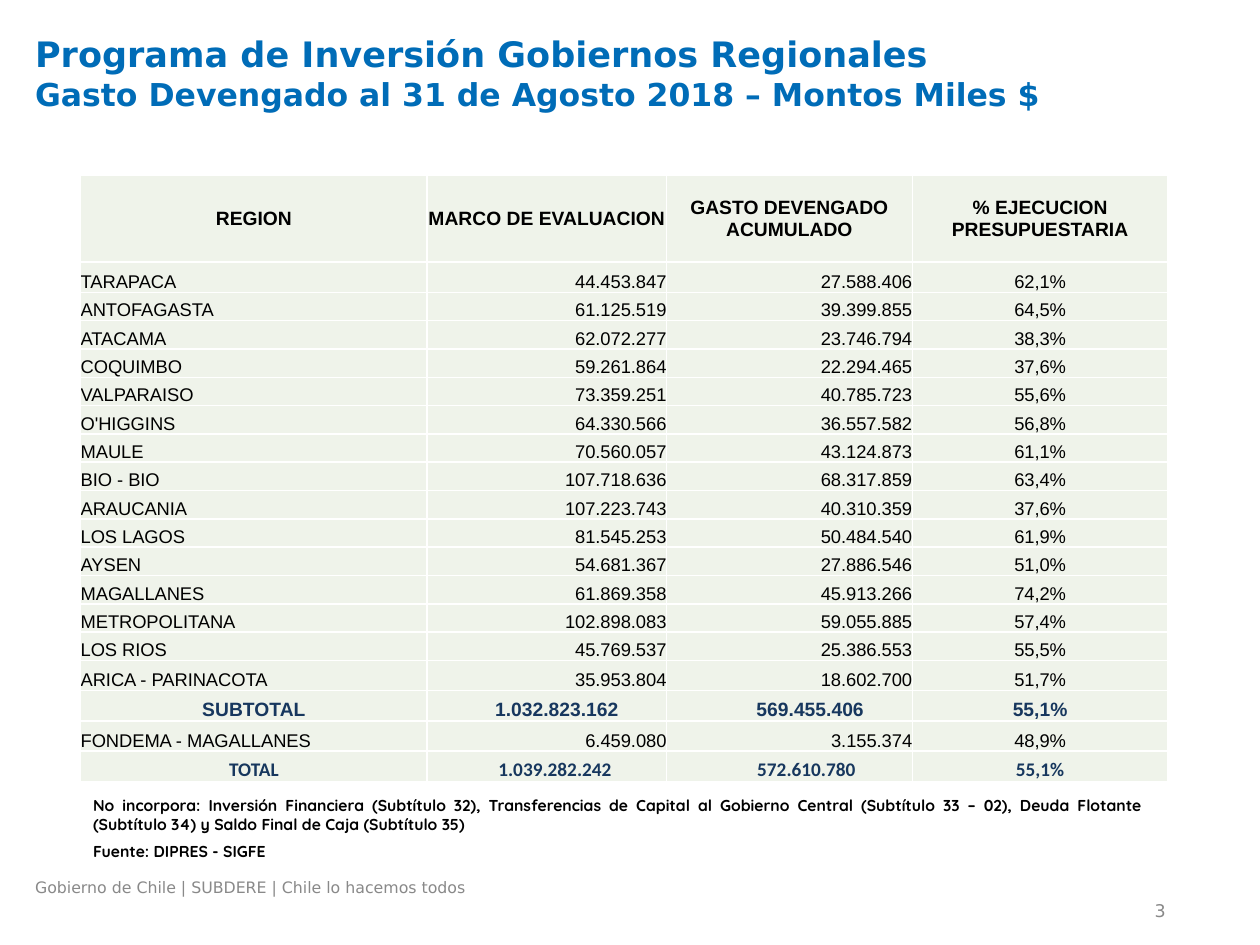
from lxml import etree
from pptx import Presentation
from pptx import util as u
from pptx.dml.color import RGBColor
from pptx.enum import text as t
from pptx.oxml.ns import qn

HUES = {"blue": "006CB7", "navy": "17375E", "gray": "898989",
        "black": "000000", "pale": "EFF3EA", "white": "FFFFFF"}
LEFT, MID, RIGHT, JUST = (t.PP_ALIGN.LEFT, t.PP_ALIGN.CENTER,
                          t.PP_ALIGN.RIGHT, t.PP_ALIGN.JUSTIFY)
TOP, CORE, LOW = (t.MSO_ANCHOR.TOP, t.MSO_ANCHOR.MIDDLE,
                  t.MSO_ANCHOR.BOTTOM)

HEAD = ["REGION", "MARCO DE EVALUACION", "GASTO DEVENGADO ACUMULADO",
        "% EJECUCION PRESUPUESTARIA"]
ROWS = [
    ("TARAPACA", "44.453.847", "27.588.406", "62,1%"),
    ("ANTOFAGASTA", "61.125.519", "39.399.855", "64,5%"),
    ("ATACAMA", "62.072.277", "23.746.794", "38,3%"),
    ("COQUIMBO", "59.261.864", "22.294.465", "37,6%"),
    ("VALPARAISO", "73.359.251", "40.785.723", "55,6%"),
    ("O'HIGGINS", "64.330.566", "36.557.582", "56,8%"),
    ("MAULE", "70.560.057", "43.124.873", "61,1%"),
    ("BIO - BIO", "107.718.636", "68.317.859", "63,4%"),
    ("ARAUCANIA", "107.223.743", "40.310.359", "37,6%"),
    ("LOS LAGOS", "81.545.253", "50.484.540", "61,9%"),
    ("AYSEN", "54.681.367", "27.886.546", "51,0%"),
    ("MAGALLANES", "61.869.358", "45.913.266", "74,2%"),
    ("METROPOLITANA", "102.898.083", "59.055.885", "57,4%"),
    ("LOS RIOS", "45.769.537", "25.386.553", "55,5%"),
    ("ARICA - PARINACOTA", "35.953.804", "18.602.700", "51,7%"),
    ("SUBTOTAL", "1.032.823.162", "569.455.406", "55,1%"),
    ("FONDEMA - MAGALLANES", "6.459.080", "3.155.374", "48,9%"),
    ("TOTAL", "1.039.282.242", "572.610.780", "55,1%"),
]
# Summary rows: font and left inset of each column
SUMS = {"SUBTOTAL": ("Arial", (0, 0.16, 0.33, 0)),
        "TOTAL": ("Calibri", (0, 0.13, 0.27, 0))}


def write(para, words, size=9, face="DejaVu Sans", hue="black", bold=False,
          align=LEFT, before=None):
    """Add a run of text to a paragraph."""
    para.alignment = align
    if before:
        para.space_before = u.Pt(before)
    run = para.add_run()
    run.text = words
    font = run.font
    font.size, font.name, font.bold = u.Pt(size), face, bold
    font.color.rgb = RGBColor.from_string(HUES[hue])


class Page:
    def __init__(self):
        self.deck = Presentation()
        self.deck.slide_width = u.Inches(10)
        self.deck.slide_height = u.Inches(7.5)
        self.slide = self.deck.slides.add_slide(self.deck.slide_layouts[6])

    def box(self, left, top, width, height, anchor=TOP):
        spot = [u.Inches(n) for n in (left, top, width, height)]
        frame = self.slide.shapes.add_textbox(*spot).text_frame
        frame.word_wrap = True
        frame.vertical_anchor = anchor
        return frame

    def edge(self, cell):
        props = cell._tc.get_or_add_tcPr()
        for n, side in enumerate(("a:lnL", "a:lnR", "a:lnT", "a:lnB")):
            line = etree.Element(qn(side), w=str(u.Pt(1)))
            fill = etree.SubElement(line, qn("a:solidFill"))
            etree.SubElement(fill, qn("a:srgbClr"), val=HUES["white"])
            props.insert(n, line)

    def cell(self, cell, words, anchor=LOW, inset=0, **look):
        cell.margin_left = u.Inches(inset)
        cell.margin_right = cell.margin_top = cell.margin_bottom = 0
        cell.vertical_anchor = anchor
        cell.fill.solid()
        cell.fill.fore_color.rgb = RGBColor.from_string(HUES["pale"])
        self.edge(cell)
        write(cell.text_frame.paragraphs[0], words, **look)

    def table(self, left, top, widths, heights):
        spot = [u.Inches(n) for n in (left, top, sum(widths), sum(heights))]
        grid = self.slide.shapes.add_table(
            len(heights), len(widths), *spot).table
        grid.first_row = grid.horz_banding = False
        for col, width in zip(grid.columns, widths):
            col.width = u.Inches(width)
        for row, height in zip(grid.rows, heights):
            row.height = u.Inches(height)
        return grid


def main():
    page = Page()

    # Title
    title = page.box(0.18, 0.21, 9.62, 0.94).paragraphs[0]
    write(title, "Programa de Inversión Gobiernos Regionales",
          size=20, hue="blue", bold=True)
    title.add_line_break()
    write(title, "Gasto Devengado al 31 de Agosto 2018 – Montos Miles $",
          size=18, hue="blue", bold=True)

    # Budget table
    thin = 16.2 / 72
    tall = [0.69, 0.24] + [thin] * 13 + [0.24] * 4
    grid = page.table(0.64, 1.39, [2.75, 1.9, 1.95, 2.03], tall)
    for c, words in enumerate(HEAD):
        page.cell(grid.cell(0, c), words, anchor=CORE, size=11,
                  face="Arial", bold=True, align=MID)
    for r, row in enumerate(ROWS, 1):
        for c, words in enumerate(row):
            if row[0] in SUMS:
                face, insets = SUMS[row[0]]
                look = dict(size=11, face=face, hue="navy", bold=True,
                            align=MID, inset=insets[c])
            else:
                look = dict(size=10.5, face="Arial",
                            align=(LEFT, RIGHT, RIGHT, MID)[c])
            page.cell(grid.cell(r, c), words, **look)

    # Notes under the table
    notes = page.box(0.64, 6.27, 8.51, 0.63)
    write(notes.paragraphs[0],
          "No incorpora: Inversión Financiera (Subtítulo 32), Transferencias "
          "de Capital al Gobierno Central (Subtítulo 33 – 02), Deuda Flotante "
          "(Subtítulo 34) y Saldo Final de Caja (Subtítulo 35)",
          face="Quicksand", bold=True, align=JUST)
    write(notes.add_paragraph(), "Fuente: DIPRES - SIGFE",
          face="Quicksand", bold=True, before=4.5)

    # Footer and page number
    write(page.box(0.18, 6.92, 6.48, 0.27).paragraphs[0],
          "Gobierno de Chile | SUBDERE | Chile lo hacemos todos", hue="gray")
    write(page.box(7.02, 7.12, 2.33, 0.21, CORE).paragraphs[0], "3",
          size=10, hue="gray", align=RIGHT)

    page.deck.save("out.pptx")


if __name__ == "__main__":
    main()
